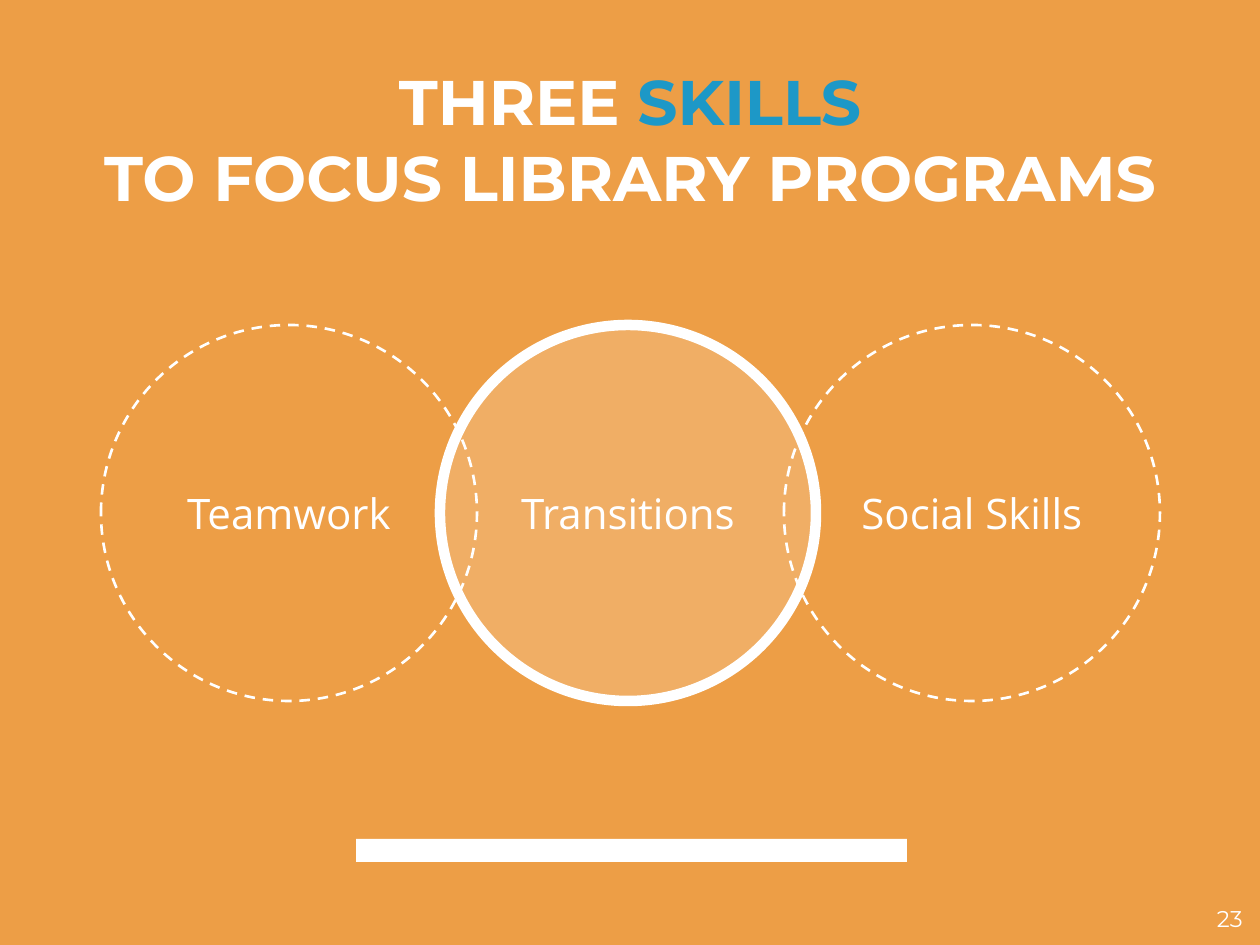
from lxml import etree
from pptx import Presentation
from pptx.dml.color import RGBColor
from pptx.enum.dml import MSO_LINE
from pptx.enum.shapes import MSO_SHAPE
from pptx.enum.text import MSO_ANCHOR, PP_ALIGN
from pptx.oxml.ns import qn
from pptx.util import Pt

PX = 914400 / 126
COLORS = {"orange": "ED9E46", "white": "FFFFFF", "blue": "1D98C7"}

TITLE = [
    [("THREE ", "white"), ("SKILLS", "blue")],
    [("TO FOCUS LIBRARY PROGRAMS", "white")],
]
DASHED = {"width": Pt(1.5), "dash_style": MSO_LINE.DASH}
SOLID = {"width": Pt(6)}
# label, left, line format, fill opacity in percent
CIRCLES = [
    ("Transitions", 440, SOLID, 17),
    ("Teamwork", 101, DASHED, 0),
    ("Social Skills", 784, DASHED, 0),
]
CIRCLE_TOP, CIRCLE_SIZE = 325, 376
BAR = (356, 839, 551, 23)
TITLE_BOX = (63, 50, 1134, 106)
NUMBER_BOX = (1179, 892, 76, 53)

TITLE_FONT = {"name": "Montserrat", "size": Pt(36), "bold": True}
LABEL_FONT = {"name": "Open Sans", "size": Pt(24), "bold": False}
NUMBER_FONT = {"name": "Montserrat", "size": Pt(13), "bold": False}


def emu(*lengths):
    return [round(n * PX) for n in lengths]


def rgb(name):
    return RGBColor.from_string(COLORS[name])


def set_attrs(obj, values):
    for key, value in values.items():
        setattr(obj, key, value)


def write(sp, paragraphs, font, align, anchor):
    tf = sp.text_frame
    margins = dict.fromkeys(
        ("margin_left", "margin_top", "margin_right", "margin_bottom"), emu(12.6)[0])
    set_attrs(tf, {"word_wrap": True, "vertical_anchor": anchor, **margins})
    for i, runs in enumerate(paragraphs):
        p = tf.add_paragraph() if i else tf.paragraphs[0]
        set_attrs(p, {"alignment": align, "line_spacing": 1.0, "space_before": Pt(0)})
        for text, color in runs:
            r = p.add_run()
            r.text = text
            set_attrs(r.font, font)
            r.font.color.rgb = rgb(color)


def add_filled(s, kind, box, opacity=100):
    """Add a white shape without outline; zero opacity means no fill."""
    sp = s.shapes.add_shape(kind, *emu(*box))
    sp.shadow.inherit = False
    sp.line.fill.background()
    if not opacity:
        sp.fill.background()
        return sp
    sp.fill.solid()
    sp.fill.fore_color.rgb = rgb("white")
    if opacity < 100:
        color = sp.fill._xPr.find(qn("a:solidFill"))[0]
        etree.SubElement(color, qn("a:alpha"), val=str(opacity * 1000))
    return sp


def main():
    prs = Presentation()
    prs.slide_width, prs.slide_height = emu(1260, 945)
    s = prs.slides.add_slide(prs.slide_layouts[5])
    s.background.fill.solid()
    s.background.fill.fore_color.rgb = rgb("orange")

    add_filled(s, MSO_SHAPE.RECTANGLE, BAR)

    title = s.shapes.title
    title.left, title.top, title.width, title.height = emu(*TITLE_BOX)
    write(title, TITLE, TITLE_FONT, PP_ALIGN.CENTER, MSO_ANCHOR.TOP)

    for label, left, line, opacity in CIRCLES:
        box = (left, CIRCLE_TOP, CIRCLE_SIZE, CIRCLE_SIZE)
        circle = add_filled(s, MSO_SHAPE.OVAL, box, opacity)
        circle.line.color.rgb = rgb("white")
        set_attrs(circle.line, line)
        write(circle, [[(label, "white")]], LABEL_FONT, PP_ALIGN.CENTER, MSO_ANCHOR.MIDDLE)

    number = s.shapes.add_textbox(*emu(*NUMBER_BOX))
    write(number, [[("23", "white")]], NUMBER_FONT, PP_ALIGN.RIGHT, MSO_ANCHOR.TOP)

    prs.save("out.pptx")


if __name__ == "__main__":
    main()
